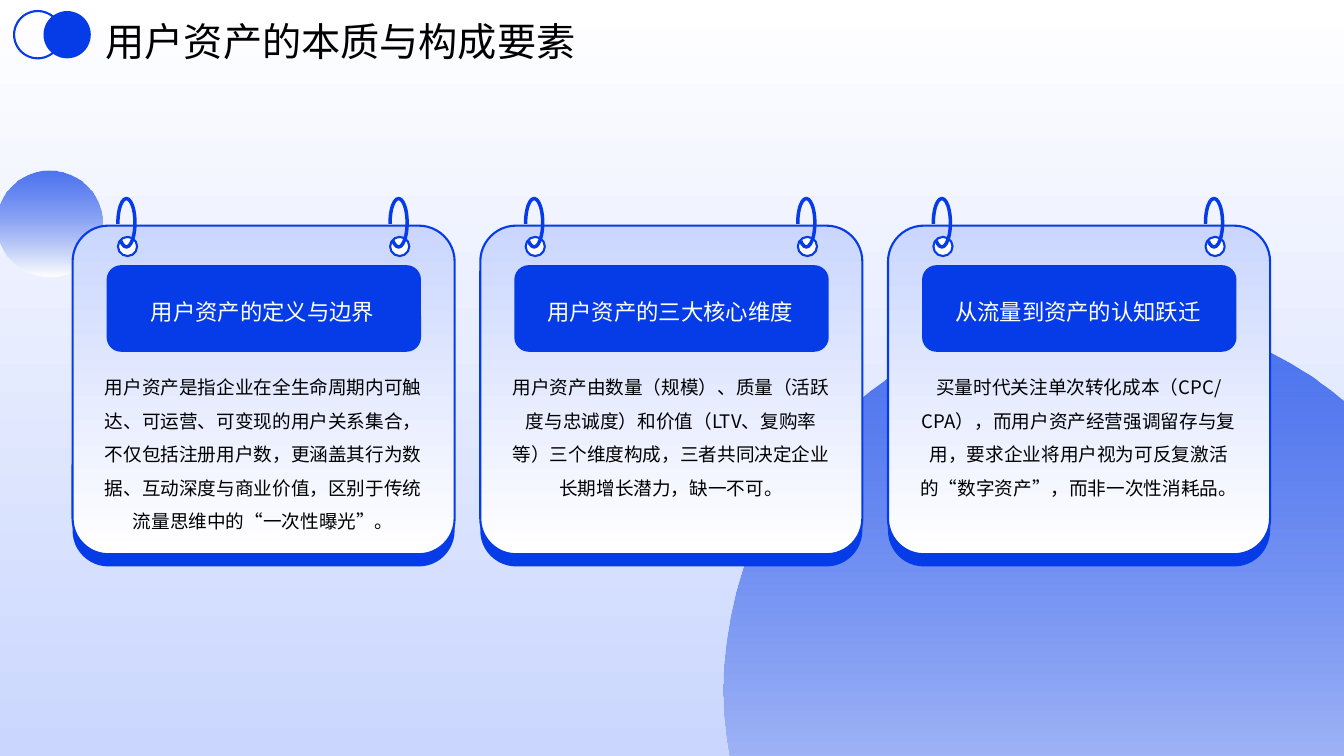
from dataclasses import dataclass

from lxml.etree import SubElement
from pptx import Presentation
from pptx.dml.color import RGBColor
from pptx.enum.shapes import MSO_SHAPE as Preset
from pptx.enum.text import MSO_ANCHOR as Anchor, PP_ALIGN as Align
from pptx.oxml.ns import qn
from pptx.util import Pt


@dataclass(frozen=True)
class Theme:
    blue: RGBColor = RGBColor(0x06, 0x3C, 0xE8)
    pale: RGBColor = RGBColor(0xCA, 0xD6, 0xFE)
    white: RGBColor = RGBColor(0xFF, 0xFF, 0xFF)
    black: RGBColor = RGBColor(0x00, 0x00, 0x00)
    font: str = "Noto Sans CJK SC"
    title_size: float = 28
    heading_size: float = 16
    body_size: float = 13.3
    outline: float = 1.5
    ring_line: float = 2.5
    orb_opacity: int = 70


THEME = Theme()
WIDTH, HEIGHT = 960, 540
CARD_WIDTH, CARD_HEIGHT, CARD_PITCH = 272.9, 234.7, 291.24
CARD_LEFT, CARD_TOP = 51.84, 161.2

TITLE = "用户资产的本质与构成要素"
CARDS = [
    ("用户资产的定义与边界",
     "用户资产是指企业在全生命周期内可触达、可运营、可变现的用户关系集合，"
     "不仅包括注册用户数，更涵盖其行为数据、互动深度与商业价值，"
     "区别于传统流量思维中的“一次性曝光”。"),
    ("用户资产的三大核心维度",
     "用户资产由数量（规模）、质量（活跃度与忠诚度）和价值（LTV、复购率等）三个维度构成，"
     "三者共同决定企业长期增长潜力，缺一不可。"),
    ("从流量到资产的认知跃迁",
     "买量时代关注单次转化成本（CPC/CPA），而用户资产经营强调留存与复用，"
     "要求企业将用户视为可反复激活的“数字资产”，而非一次性消耗品。"),
]


def add_figure(shapes, preset, left, top, width, height, fill=None, line=None,
               line_width=THEME.outline, adjust=()):
    figure = shapes.add_shape(preset, Pt(left), Pt(top), Pt(width), Pt(height))
    figure.shadow.inherit = False
    for index, value in enumerate(adjust):
        figure.adjustments[index] = value
    if fill is None:
        figure.fill.background()
    elif isinstance(fill, RGBColor):
        figure.fill.solid()
        figure.fill.fore_color.rgb = fill
    else:
        figure.fill.gradient()
        figure.fill.gradient_angle = 270
        for stop, color in zip(figure.fill.gradient_stops, fill):
            stop.color.rgb = color
    if line is None:
        figure.line.fill.background()
    else:
        figure.line.color.rgb = line
        figure.line.width = Pt(line_width)
    return figure


def add_text(shapes, words, left, top, width, height, size, color, spacing,
             align=Align.CENTER, anchor=Anchor.MIDDLE, side_inset=0):
    frame = shapes.add_textbox(Pt(left), Pt(top), Pt(width), Pt(height)).text_frame
    frame.word_wrap = True
    frame.vertical_anchor = anchor
    frame.margin_left = frame.margin_right = Pt(side_inset)
    frame.margin_top = frame.margin_bottom = 0
    paragraph = frame.paragraphs[0]
    paragraph.text = words
    paragraph.alignment = align
    paragraph.line_spacing = spacing
    paragraph.font.size = Pt(size)
    paragraph.font.color.rgb = color
    paragraph.font.name = THEME.font
    defaults = paragraph._p.pPr.find(qn("a:defRPr"))
    SubElement(defaults, qn("a:ea")).set("typeface", THEME.font)


def add_orb(shapes, left, top, diameter):
    orb = add_figure(shapes, Preset.OVAL, left, top, diameter, diameter,
                     (THEME.blue, THEME.white))
    top_color = next(orb.element.iter(qn("a:srgbClr")))
    SubElement(top_color, qn("a:alpha")).set("val", str(THEME.orb_opacity * 1000))


def add_backdrop(shapes, width, height):
    add_figure(shapes, Preset.RECTANGLE, 0, 0, width, height,
               (THEME.white, THEME.pale))
    add_orb(shapes, -2.2, 122.1, 75.2)
    add_orb(shapes, 516.8, 223.2, 539.3)


def add_title(shapes, left, top, height):
    add_text(shapes, TITLE, left + 58.3, top, 708.5, height + 1.5,
             THEME.title_size, THEME.black, 1.2, Align.LEFT, side_inset=7.2)
    circle = Preset.FLOWCHART_CONNECTOR
    add_figure(shapes, circle, left + 21, top, height, height, THEME.blue)
    add_figure(shapes, circle, left, top, height, height, line=THEME.blue)


def add_ring(shapes, left, top):
    ring = shapes.add_group_shape().shapes
    add_figure(ring, Preset.OVAL, left, top + 27.4, 13.7, 13.7,
               THEME.white, THEME.blue)
    add_figure(ring, Preset.ARC, left, top, 12.2, 34.6, line=THEME.blue,
               line_width=THEME.ring_line, adjust=(103.104, 64.252))


def add_card(shapes, left, top, width, height, heading, body):
    rounded = Preset.ROUNDED_RECTANGLE
    add_figure(shapes, rounded, left, top + 8.7, width, height,
               THEME.blue, adjust=(0.109,))
    add_figure(shapes, rounded, left, top, width, height,
               (THEME.pale, THEME.white), THEME.blue, adjust=(0.109,))
    add_text(shapes, body, left + 20.3, top + 99.4, width - 41, 120.2,
             THEME.body_size, THEME.black, 1.5, anchor=Anchor.TOP)
    add_figure(shapes, rounded, left + 24.3, top + 28.2, width - 48.3, 61.9,
               THEME.blue)
    add_text(shapes, heading, left + 32.4, top + 31.8, width - 66.3, 53.3,
             THEME.heading_size, THEME.white, 1.3)
    for ring_left in (32.4, width - 46.1):
        add_ring(shapes, left + ring_left, top - 19.4)


def main():
    deck = Presentation()
    deck.slide_width, deck.slide_height = Pt(WIDTH), Pt(HEIGHT)
    shapes = deck.slides.add_slide(deck.slide_layouts[6]).shapes
    add_backdrop(shapes, WIDTH, HEIGHT)
    for index, (heading, body) in enumerate(CARDS):
        add_card(shapes, CARD_LEFT + index * CARD_PITCH, CARD_TOP,
                 CARD_WIDTH, CARD_HEIGHT, heading, body)
    add_title(shapes, 10.1, 7.9, 33.8)
    deck.save("out.pptx")


if __name__ == "__main__":
    main()
